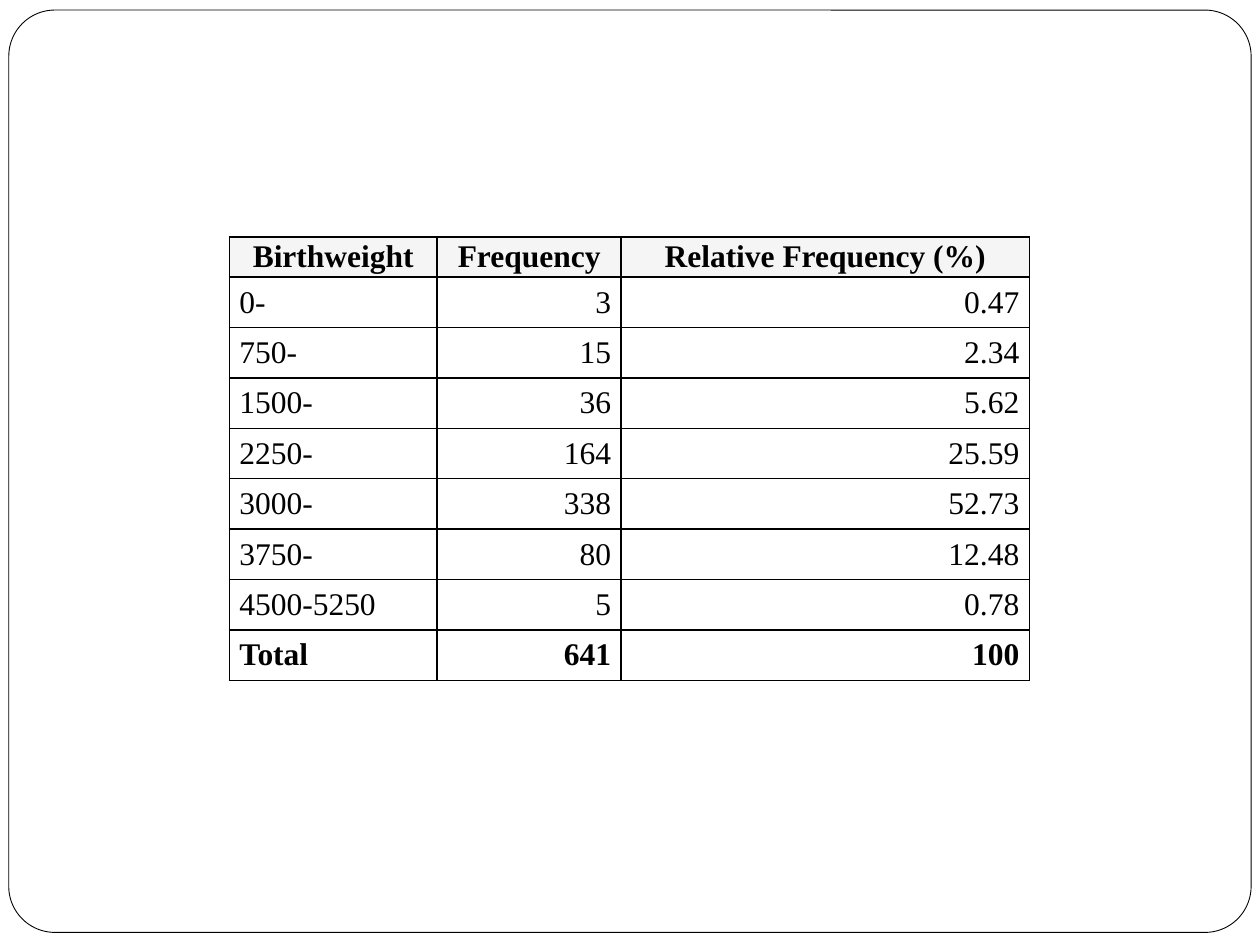
import pptx
import pptx.dml.color
import pptx.enum.shapes
import pptx.enum.text
import pptx.oxml
import pptx.oxml.ns
import pptx.util
from pptx.util import Inches

COLORS = {name: pptx.dml.color.RGBColor.from_string(value) for name, value in {
    "ink": "000000", "paper": "FFFFFF", "header": "F5F5F5"}.items()}
ALIGN = pptx.enum.text.PP_ALIGN
HEADINGS = ("Birthweight", "Frequency", "Relative Frequency (%)")
CLASSES = [
    ("0-", "3", "0.47"),
    ("750-", "15", "2.34"),
    ("1500-", "36", "5.62"),
    ("2250-", "164", "25.59"),
    ("3000-", "338", "52.73"),
    ("3750-", "80", "12.48"),
    ("4500-5250", "5", "0.78"),
]
TOTAL = ("Total", "641", "100")
COLUMN_WIDTHS = (1.65, 1.46, 3.24)
HEADER_HEIGHT, ROW_HEIGHT = 0.32, 0.4


def add_borders(cell):
    for side in ("lnL", "lnR", "lnT", "lnB"):
        cell._tc.get_or_add_tcPr().append(pptx.oxml.parse_xml(
            f'<a:{side} {pptx.oxml.ns.nsdecls("a")} w="12700"><a:solidFill>'
            f'<a:srgbClr val="{COLORS["ink"]}"/></a:solidFill></a:{side}>'))


presentation = pptx.Presentation()
presentation.slide_width, presentation.slide_height = Inches(10), Inches(7.5)
slide = presentation.slides.add_slide(presentation.slide_layouts[6])

frame = slide.shapes.add_shape(
    pptx.enum.shapes.MSO_SHAPE.ROUNDED_RECTANGLE,
    Inches(0.07), Inches(0.08), Inches(9.86), Inches(7.32))
frame.adjustments[0] = 0.05
frame.shadow.inherit = False
frame.fill.solid()
frame.fill.fore_color.rgb = COLORS["paper"]
frame.line.color.rgb = COLORS["ink"]
frame.line.width = pptx.util.Pt(0.5)

rows = [HEADINGS, *CLASSES, TOTAL]
distribution = slide.shapes.add_table(
    len(rows), len(HEADINGS), Inches(1.82), Inches(1.88),
    Inches(sum(COLUMN_WIDTHS)),
    Inches(HEADER_HEIGHT + ROW_HEIGHT * (len(rows) - 1))).table
for column, width in zip(distribution.columns, COLUMN_WIDTHS):
    column.width = Inches(width)

for row_index, values in enumerate(rows):
    is_header = row_index == 0
    distribution.rows[row_index].height = Inches(HEADER_HEIGHT if is_header else ROW_HEIGHT)
    side_margin, end_margin = (0.02, 0.02) if is_header else (0.08, 0.06)
    for column_index, value in enumerate(values):
        cell = distribution.cell(row_index, column_index)
        add_borders(cell)
        cell.fill.solid()
        cell.fill.fore_color.rgb = COLORS["header" if is_header else "paper"]
        cell.margin_left = cell.margin_right = Inches(side_margin)
        cell.margin_top = cell.margin_bottom = Inches(end_margin)
        cell.vertical_anchor = pptx.enum.text.MSO_ANCHOR.MIDDLE
        cell.text = value
        paragraph = cell.text_frame.paragraphs[0]
        if is_header:
            paragraph.alignment = ALIGN.CENTER
        else:
            paragraph.alignment = ALIGN.RIGHT if column_index else ALIGN.LEFT
        font = paragraph.runs[0].font
        for attribute, setting in {"name": "Times New Roman", "size": pptx.util.Pt(18),
                                   "bold": values in (HEADINGS, TOTAL)}.items():
            setattr(font, attribute, setting)
        font.color.rgb = COLORS["ink"]

presentation.save("out.pptx")
